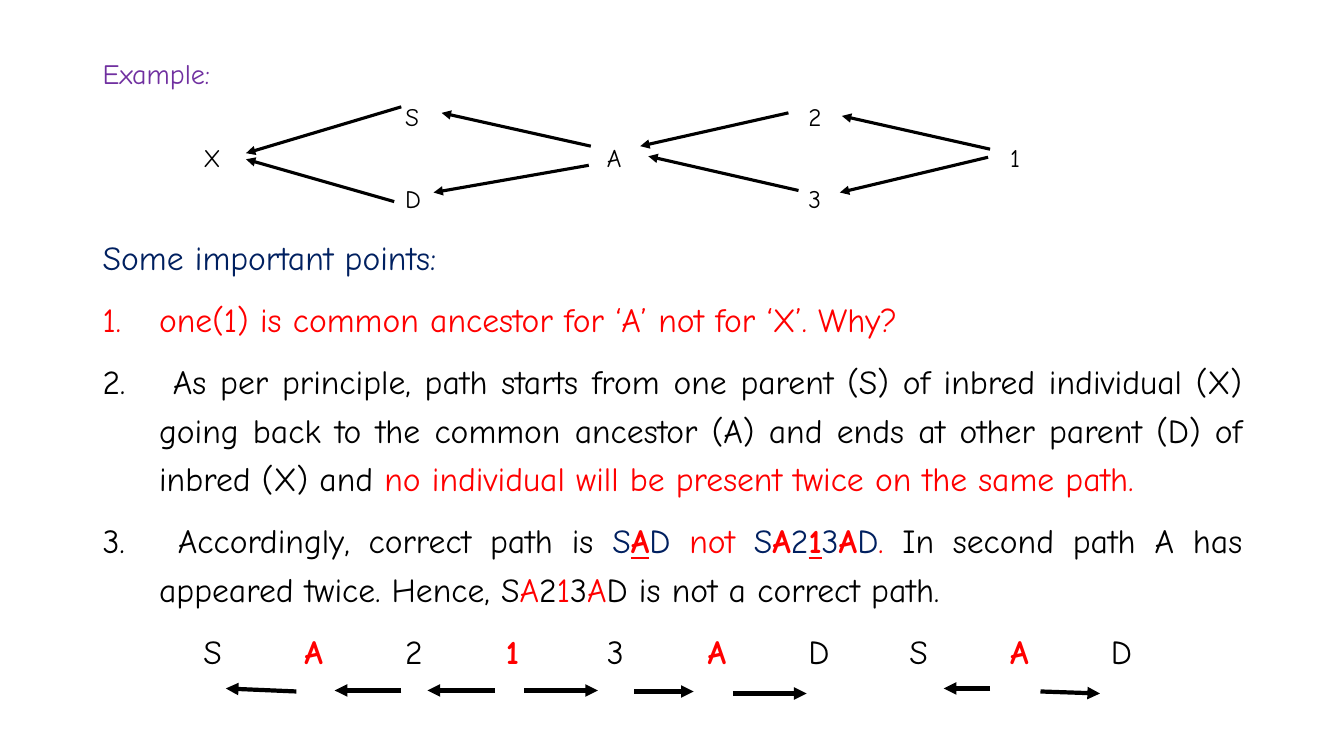
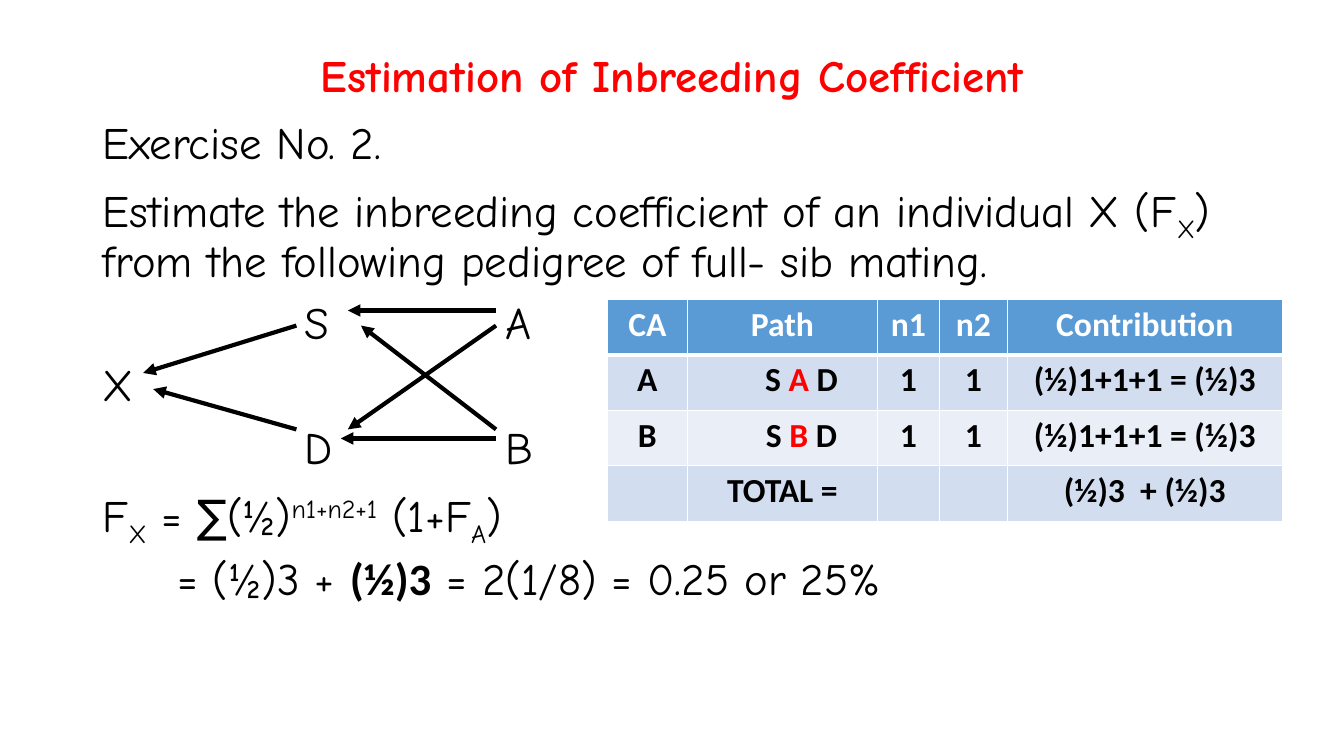
"""Build two slides on pedigree paths and the inbreeding coefficient."""
import pptx
import pptx.dml.color
import pptx.enum.shapes
import pptx.enum.text
import pptx.oxml.ns
import pptx.util
from lxml import etree

Inches = pptx.util.Inches
Pt = pptx.util.Pt
qn = pptx.oxml.ns.qn
rgb = pptx.dml.color.RGBColor.from_string
ALIGN = pptx.enum.text.PP_ALIGN
BLACK, WHITE, RED = "000000", "FFFFFF", "FF0000"
NAVY, PURPLE = "002060", "7030A0"
HEADER, BAND, LIGHT = "5B9BD5", "D2DEEF", "EAEFF7"
LEFT, WIDTH = 0.92, 11.5


def add_run(p, text, size=24, color=BLACK, font="Comic Neue", bold=False, underline=False, base=0):
    r = p.add_run()
    r.text = text
    r.font.size = Pt(size)
    r.font.name = font
    r.font.bold = bold
    r.font.underline = underline
    r.font.color.rgb = rgb(color)
    if base:
        r._r.get_or_add_rPr().set("baseline", str(base * 1000))


def add_arrow(s, x1, y1, x2, y2, width=3):
    line = s.shapes.add_connector(pptx.enum.shapes.MSO_CONNECTOR.STRAIGHT,
                                  Inches(x1), Inches(y1), Inches(x2), Inches(y2))
    line.line.color.rgb = rgb(BLACK)
    line.line.width = Pt(width)
    etree.SubElement(line.line._get_or_add_ln(), qn("a:tailEnd"), type="triangle")
    etree.SubElement(line._element.spPr, qn("a:effectLst"))


prs = pptx.Presentation()
prs.slide_width, prs.slide_height = Inches(13.33), Inches(7.5)

s = prs.slides.add_slide(prs.slide_layouts[6])
points_tf = s.shapes.add_textbox(Inches(LEFT), Inches(0.55), Inches(WIDTH), Inches(6.68)).text_frame
points_tf.word_wrap = True

red, navy = {"color": RED}, {"color": NAVY}
strong = {"color": RED, "bold": True}
marked = {"color": RED, "bold": True, "underline": True}
pedigree = [
    [("Example:", {"size": 20, "color": PURPLE})],
    [("\t\t\tS\t\t\t\t2", {"size": 18})],
    [("\tX\t\t\t\tA\t\t\t\t1", {"size": 18})],
    [("\t\t\tD\t\t\t\t3", {"size": 18})],
]
heading = [[("Some important points:", navy)]]
points = [
    [("one(1) is common ancestor for ‘A’ not for ‘X’. Why?", red)],
    [(" As per principle, path starts from one parent (S) of inbred individual (X) going back "
      "to the common ancestor (A) and ends at other parent (D) of inbred (X) and ", {}),
     ("no individual will be present twice on the same path.", red)],
    [(" Accordingly, correct path is ", {}), ("S", navy), ("A", marked), ("D ", navy),
     ("not ", red), ("S", navy), ("A", strong), ("2", navy), ("1", marked), ("3", navy),
     ("A", strong), ("D", navy), (".", red),
     (" In second path A has appeared twice. Hence, S", {}), ("A", red), ("2", {}), ("1", red),
     ("3", {}), ("A", red), ("D is not a correct path.", {})],
]
paths = [[("\t" + c, strong if c in "A1" else {}) for c in "SA213ADSAD"]]

for group in (pedigree, heading, points, paths):
    for runs in group:
        first = runs is pedigree[0]
        p = points_tf.paragraphs[0] if first else points_tf.add_paragraph()
        p.line_spacing = 0.9 if group is pedigree else 1.2
        p.space_before = Pt(0 if first else 10)
        p.alignment = ALIGN.LEFT if group is pedigree else ALIGN.JUSTIFY
        if group is points:
            pPr = p._p.get_or_add_pPr()
            pPr.set("marL", str(Inches(0.56)))
            pPr.set("indent", str(-Inches(0.56)))
            etree.SubElement(pPr, qn("a:buFont"), typeface="+mj-lt")
            etree.SubElement(pPr, qn("a:buAutoNum"), type="arabicPeriod")
        for text, fmt in runs:
            add_run(p, text, **fmt)

for ends in [(9.82, 1.48, 8.35, 1.15), (9.8, 1.56, 8.33, 1.91),
             (7.82, 1.12, 6.35, 1.45), (7.92, 1.89, 6.43, 1.55),
             (5.86, 1.45, 4.38, 1.12), (5.84, 1.64, 4.3, 1.91),
             (3.98, 1.06, 2.44, 1.52), (3.91, 2, 2.44, 1.58)]:
    add_arrow(s, *ends, width=2.25)
for ends in [(2.94, 6.86, 2.24, 6.83), (3.98, 6.85, 3.32, 6.85), (4.91, 6.85, 4.24, 6.85),
             (5.2, 6.85, 5.93, 6.85), (6.29, 6.86, 6.88, 6.86), (7.27, 6.88, 8, 6.88),
             (9.82, 6.83, 9.36, 6.83), (10.32, 6.86, 10.91, 6.88)]:
    add_arrow(s, *ends)

s = prs.slides.add_slide(prs.slide_layouts[5])
title = s.shapes.title
title.left, title.top = Inches(LEFT), Inches(0.4)
title.width, title.height = Inches(WIDTH), Inches(0.75)
title.text_frame.word_wrap = True
title.text_frame.vertical_anchor = pptx.enum.text.MSO_ANCHOR.MIDDLE
p = title.text_frame.paragraphs[0]
p.alignment = ALIGN.CENTER
p.line_spacing = 0.9
add_run(p, "Estimation of Inbreeding Coefficient", size=32, color=RED, bold=True)

exercise_tf = s.shapes.add_textbox(Inches(LEFT), Inches(1.15), Inches(WIDTH), Inches(5.6)).text_frame
exercise_tf.word_wrap = True
sub, sup = {"base": -25}, {"base": 30}
exercise = [
    [("Exercise No. 2.", {})],
    [("Estimate the inbreeding coefficient of an individual X (F", {}), ("X", sub),
     (") from the following pedigree of full- sib mating.", {})],
    [("\t\tS\t\tA", {})],
    [("X", {})],
    [("\t\tD\t\tB", {})],
    [("F", {}), ("X", sub), (" = ∑(½)", {}), ("n1+n2+1", sup), (" (1+F", {}), ("A", sub), (")", {})],
    [("= (½)3 + ", {}), ("(½)3", {"font": "Calibri", "bold": True}),
     (" = 2(1/8) = 0.25 or 25%", {})],
]
for i, runs in enumerate(exercise):
    p = exercise_tf.add_paragraph() if i else exercise_tf.paragraphs[0]
    p.line_spacing = 0.9
    p.space_before = Pt(10 if i else 0)
    for text, fmt in runs:
        add_run(p, text, size=32, **fmt)
p._p.get_or_add_pPr().set("marL", str(Inches(0.74)))

for p in points_tf.paragraphs + exercise_tf.paragraphs:
    if "\t" in p.text:
        stops = etree.SubElement(p._p.get_or_add_pPr(), qn("a:tabLst"))
        for inch in range(1, 11):
            etree.SubElement(stops, qn("a:tab"), pos=str(Inches(inch)), algn="l")

for ends in [(4.92, 3.08, 3.45, 3.08), (4.92, 4.35, 3.38, 4.35),
             (2.94, 3.23, 1.42, 3.7), (2.94, 4.26, 1.52, 3.86),
             (4.92, 4.26, 3.58, 3.23), (4.92, 3.23, 3.45, 4.26)]:
    add_arrow(s, *ends)

rows = [
    ["CA", "Path", "n1", "n2", "Contribution"],
    ["A", "S A D", "1", "1", "(½)1+1+1 = (½)3"],
    ["B", "S B D", "1", "1", "(½)1+1+1 = (½)3"],
    ["", "TOTAL =", "", "", "(½)3  + (½)3"],
]
tbl = s.shapes.add_table(4, 5, Inches(6.02), Inches(2.97), Inches(6.7), Inches(2.2)).table
tbl.horz_banding = False
for col, width in zip(tbl.columns, (0.8, 1.88, 0.62, 0.67, 2.73)):
    col.width = Inches(width)
for i, (row, fill) in enumerate(zip(rows, (HEADER, BAND, LIGHT, BAND))):
    for j, text in enumerate(row):
        cell = tbl.cell(i, j)
        cell.fill.solid()
        cell.fill.fore_color.rgb = rgb(fill)
        if i == 0:
            border = etree.Element(qn("a:lnB"), w=str(Pt(3)))
            solid = etree.SubElement(border, qn("a:solidFill"))
            etree.SubElement(solid, qn("a:srgbClr"), val=WHITE)
            cell._tc.get_or_add_tcPr().insert(0, border)
        p = cell.text_frame.paragraphs[0]
        p.alignment = ALIGN.CENTER
        is_path = text.startswith("S ")
        if is_path:
            cell.margin_left = Inches(0.48)
        for part in (text[:2], text[2], text[3:]) if is_path else filter(None, [text]):
            color = RED if is_path and part in "AB" else BLACK if i else WHITE
            add_run(p, part, color=color, font="Calibri", bold=True)

prs.save("out.pptx")
